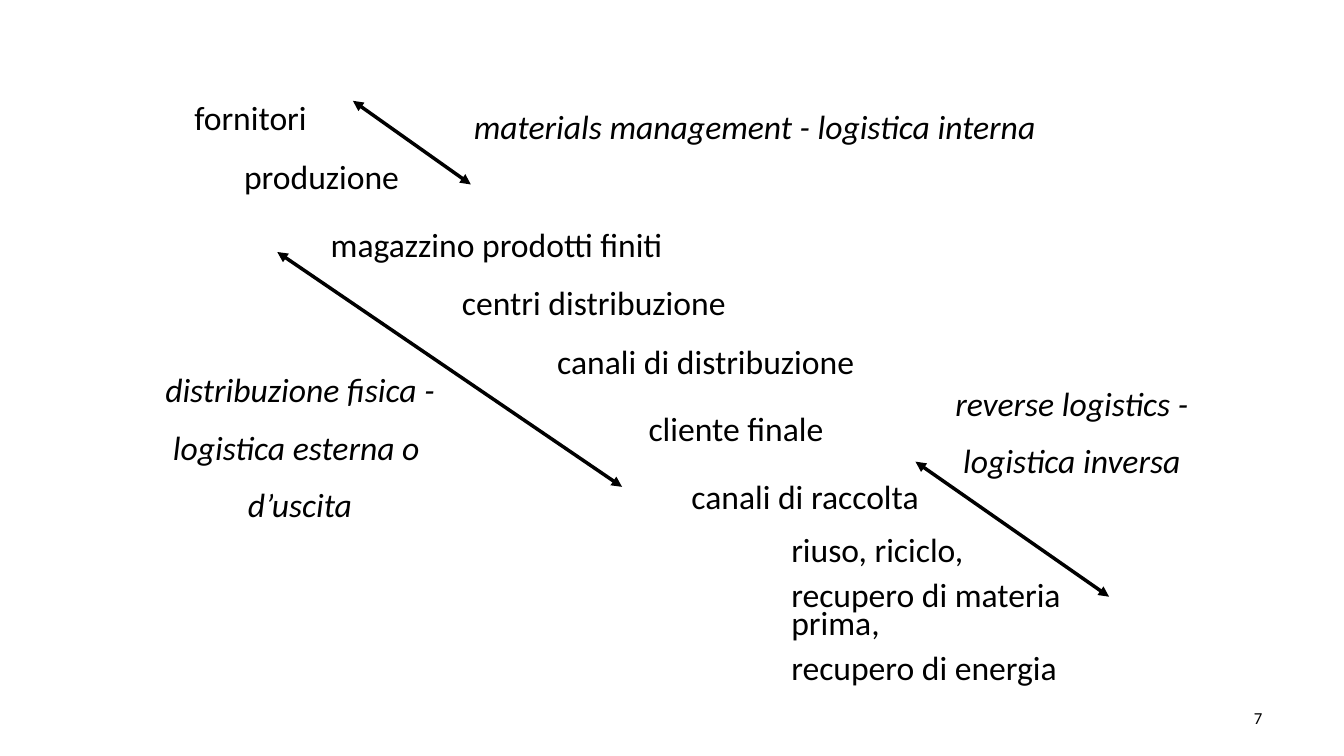
import pptx
import pptx.dml.color
import pptx.enum.shapes
import pptx.enum.text
import pptx.oxml
import pptx.oxml.ns
import pptx.util

EMU_PER_PX = 9144  # 100 px to the inch
SLIDE_SIZE = (1333, 750)
COLORS = {"text": "000000", "line": "000000"}
ALIGN = pptx.enum.text.PP_ALIGN
CENTERED = {"alignment": ALIGN.CENTER}
SPACED = {**CENTERED, "space_before": pptx.util.Pt(12)}
COMPACT = {**SPACED, "alignment": ALIGN.LEFT, "line_spacing": 0.7}
PLAIN = {"name": "Calibri", "size": pptx.util.Pt(24)}
ITALIC = {**PLAIN, "italic": True}
SMALL = {**PLAIN, "size": pptx.util.Pt(12)}
UNWRAPPED = {
    "word_wrap": False,
    "auto_size": pptx.enum.text.MSO_AUTO_SIZE.SHAPE_TO_FIT_TEXT,
    "vertical_anchor": pptx.enum.text.MSO_ANCHOR.MIDDLE,
}
WRAPPED = {**UNWRAPPED, "word_wrap": True}
TOP_WRAPPED = {**WRAPPED, "vertical_anchor": pptx.enum.text.MSO_ANCHOR.TOP}
FIXED = {**WRAPPED, "auto_size": pptx.enum.text.MSO_AUTO_SIZE.NONE}

CHAIN_STEPS = [
    ("fornitori", (182, 91, 133, 50)),
    ("produzione", (231, 150, 176, 50)),
    ("magazzino prodotti finiti", (317, 217, 351, 50)),
    ("centri distribuzione", (447, 275, 284, 50)),
    ("canali di distribuzione", (542, 333, 316, 50)),
    ("cliente finale", (632, 400, 196, 50)),
    ("canali di raccolta", (675, 467, 247, 50)),
]
PHASE_ARROWS = [
    (350, 100, 467, 183),
    (275, 250, 617, 483),
    (908, 458, 1100, 592),
]


def px(*lengths):
    return [pptx.util.Emu(length * EMU_PER_PX) for length in lengths]


def apply_format(target, values):
    for name, value in values.items():
        setattr(target, name, value)


def add_text(slide, lines, box, frame_format, paragraph_format, font_format):
    """Add a text box with one paragraph for each line."""
    frame = slide.shapes.add_textbox(*px(*box)).text_frame
    apply_format(frame, frame_format)
    frame.text = "\n".join(lines)
    for paragraph in frame.paragraphs:
        apply_format(paragraph, paragraph_format)
        font = paragraph.runs[0].font
        apply_format(font, font_format)
        font.color.rgb = pptx.dml.color.RGBColor.from_string(COLORS["text"])


def add_double_arrow(slide, ends):
    connector = slide.shapes.add_connector(
        pptx.enum.shapes.MSO_CONNECTOR.STRAIGHT, *px(*ends))
    connector.line.width = pptx.util.Pt(2.5)
    connector.line.color.rgb = pptx.dml.color.RGBColor.from_string(COLORS["line"])
    properties = connector.line._get_or_add_ln()
    namespace = pptx.oxml.ns.nsdecls("a")
    for end in ("headEnd", "tailEnd"):
        properties.append(pptx.oxml.parse_xml(
            f'<a:{end} {namespace} type="triangle"/>'))
    connector._element.spPr.append(
        pptx.oxml.parse_xml(f"<a:effectLst {namespace}/>"))


def main():
    presentation = pptx.Presentation()
    presentation.slide_width, presentation.slide_height = px(*SLIDE_SIZE)
    slide = presentation.slides.add_slide(presentation.slide_layouts[6])

    for step, box in CHAIN_STEPS:
        add_text(slide, [step], box, UNWRAPPED, SPACED, PLAIN)
    add_text(slide, ["riuso, riciclo,", "recupero di materia prima,",
                     "recupero di energia"],
             (775, 526, 373, 165), WRAPPED, COMPACT, PLAIN)

    for ends in PHASE_ARROWS:
        add_double_arrow(slide, ends)
    add_text(slide, ["materials management - logistica interna"],
             (457, 100, 583, 50), UNWRAPPED, CENTERED, ITALIC)
    add_text(slide, ["distribuzione fisica -", "logistica esterna o ", "d’uscita"],
             (149, 357, 297, 172), UNWRAPPED, SPACED, ITALIC)
    add_text(slide, ["reverse logistics -", "logistica inversa"],
             (917, 375, 292, 111), TOP_WRAPPED, SPACED, ITALIC)

    add_text(slide, ["7"], (962, 692, 300, 40), FIXED,
             {"alignment": ALIGN.RIGHT}, SMALL)
    presentation.save("out.pptx")


if __name__ == "__main__":
    main()
